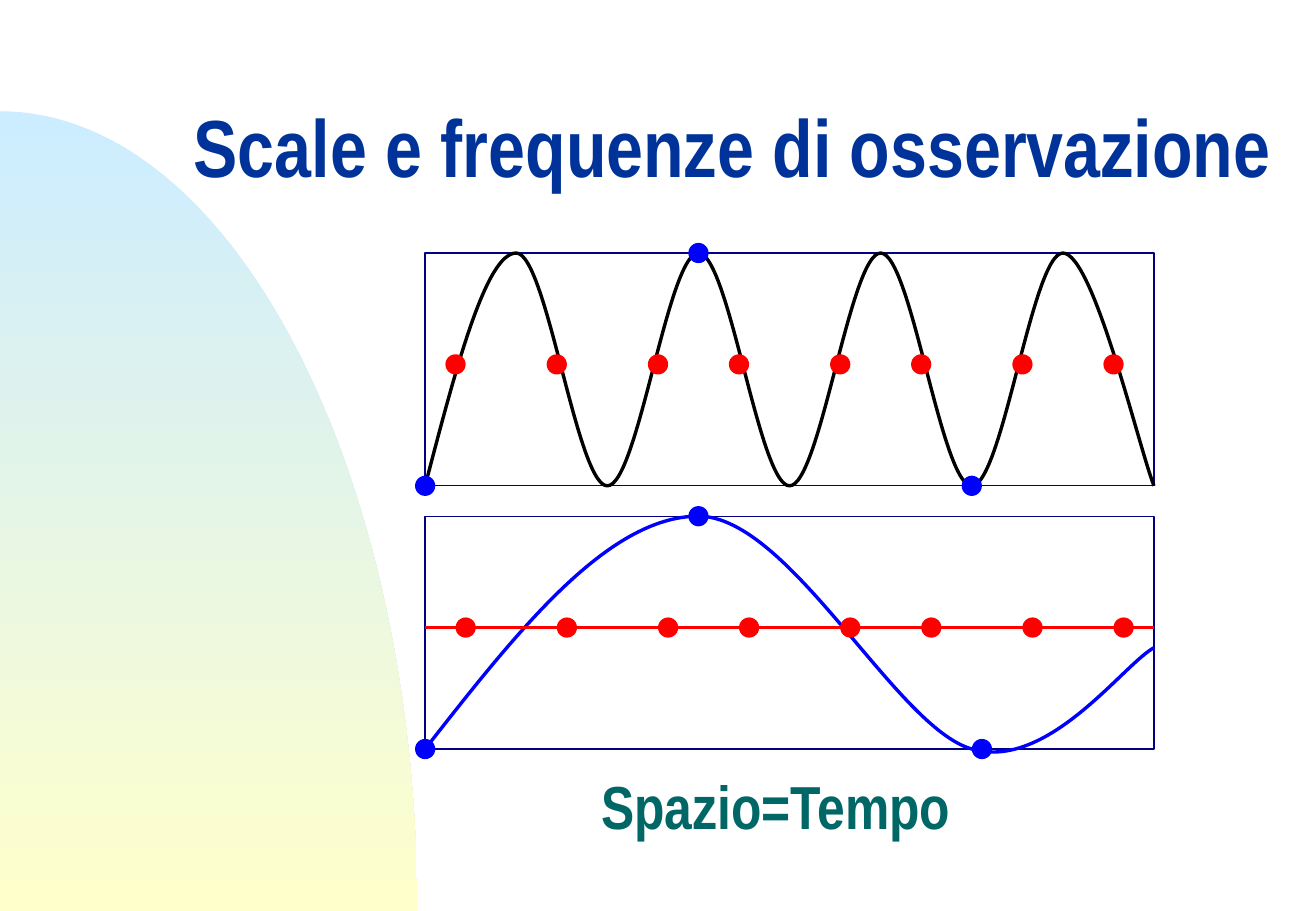
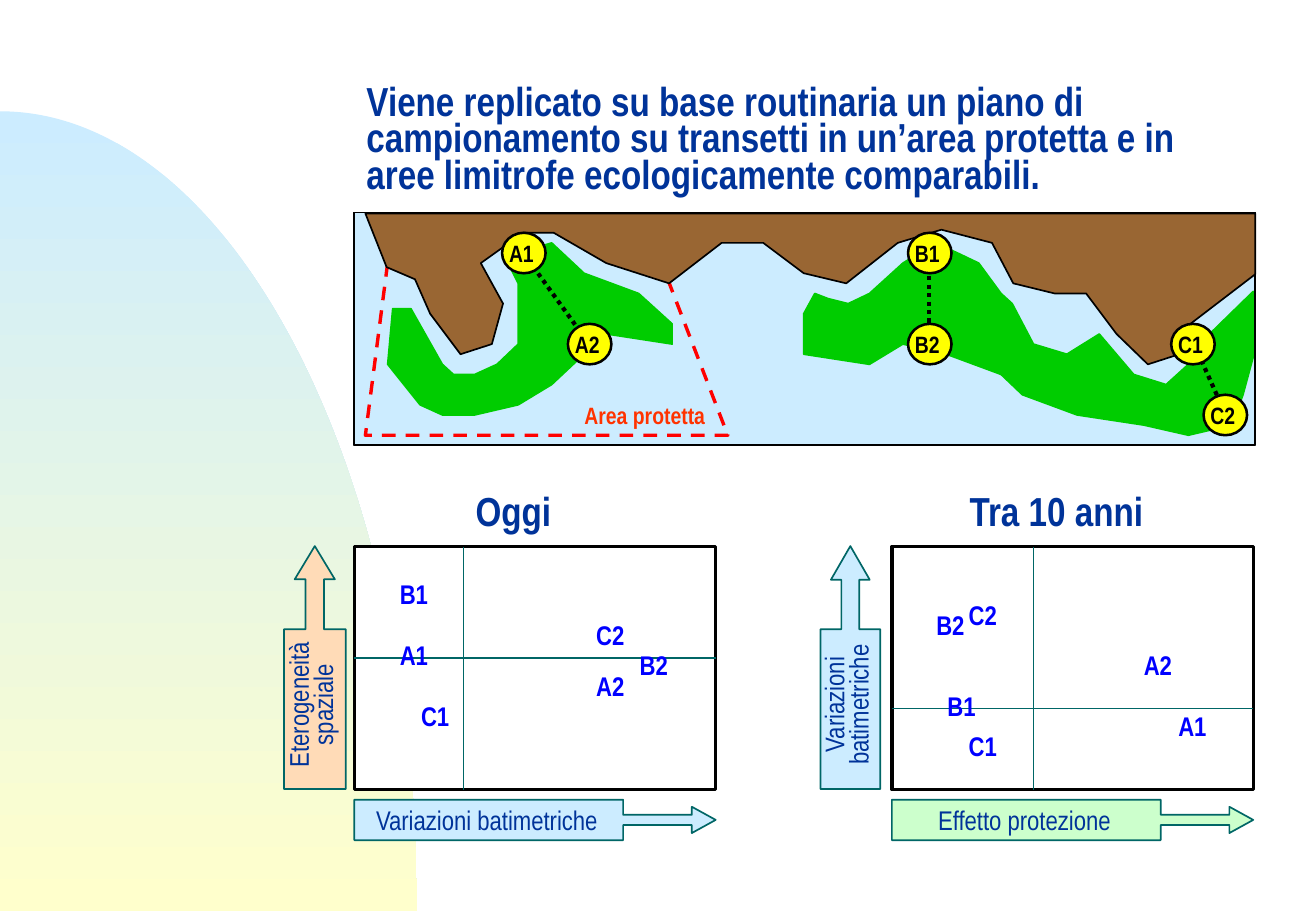
import dataclasses
import typing

import lxml.etree
import pptx
import pptx.dml.color
import pptx.enum.dml
import pptx.enum.shapes
import pptx.enum.text
import pptx.oxml.ns
import pptx.slide
import pptx.util

PX = 7620  # 120 px to the inch
FONT = "Arial Narrow"
HUES = {
    "navy": "003399", "frame": "000080", "teal": "006666", "black": "000000",
    "ink": "010000", "white": "FFFFFF", "red": "FF0000", "blue": "0000FF",
    "sky": "CCECFF", "cream": "FFFFCC", "green": "00CC00", "mint": "CCFFCC",
    "peach": "FFDBB7", "brown": "996633", "yellow": "FFFF00", "orange": "FF3300",
}
KIND = pptx.enum.shapes.MSO_SHAPE
DASH = pptx.enum.dml.MSO_LINE.DASH
DOTS = pptx.enum.dml.MSO_LINE.ROUND_DOT
ALIGN = pptx.enum.text.PP_ALIGN
ANCHOR = pptx.enum.text.MSO_ANCHOR

Point = tuple[int, int]
Slide = pptx.slide.Slide


class Box(typing.NamedTuple):
    left: int
    top: int
    width: int
    height: int


@dataclasses.dataclass
class Pen:
    hue: str
    width: float
    dash: typing.Any = None


@dataclasses.dataclass
class Type:
    size: int
    hue: str = "navy"
    bold: bool = True
    align: typing.Any = ALIGN.LEFT
    gap: float = 1.0
    inset: tuple[int, int] = (12, 6)
    anchor: typing.Any = ANCHOR.TOP
    turn: int = 0


@dataclasses.dataclass
class Arrow:
    box: Box
    fill: str
    adjust: tuple[float, ...]
    text: str
    label: Box
    type: Type
    turn: int = 0


@dataclasses.dataclass
class Plot:
    """A chart of sites: frame, cross lines, heading, site marks and axis arrows."""
    left: int
    cross: Point
    title: str
    head: Box
    sites: dict[str, Point]
    axes: tuple[Arrow, Arrow]


def emu(px: int) -> int:
    return px * PX


def color(hue: str) -> pptx.dml.color.RGBColor:
    return pptx.dml.color.RGBColor.from_string(HUES[hue])


def stroke(line: typing.Any, pen: Pen | None) -> None:
    if pen is None:
        line.fill.background()
        return
    line.color.rgb = color(pen.hue)
    line.width = pptx.util.Pt(pen.width)
    if pen.dash is not None:
        line.dash_style = pen.dash


def paint(shape: typing.Any, fill: str | None, pen: Pen | None) -> None:
    shape.shadow.inherit = False
    if fill is None:
        shape.fill.background()
    else:
        shape.fill.solid()
        shape.fill.fore_color.rgb = color(fill)
    stroke(shape.line, pen)


def add_form(slide: Slide, kind: typing.Any, box: Box, fill: str | None = None,
             pen: Pen | None = None) -> typing.Any:
    shape = slide.shapes.add_shape(kind, *map(emu, box))
    paint(shape, fill, pen)
    return shape


def add_path(slide: Slide, points: typing.Sequence[Point], fill: str | None = None,
             pen: Pen | None = None, close: bool = True) -> typing.Any:
    draft = slide.shapes.build_freeform(*points[0], scale=float(PX))
    draft.add_line_segments(points[1:], close=close)
    shape = draft.convert_to_shape()
    paint(shape, fill, pen)
    return shape


def bend(shape: typing.Any, arcs: int) -> None:
    """Turn each of the first triples of straight segments into one Bezier arc."""
    name = pptx.oxml.ns.qn
    lines = list(shape._element.spPr.iter(name("a:lnTo")))
    for i in range(0, 3 * arcs, 3):
        arc = lxml.etree.Element(name("a:cubicBezTo"))
        lines[i].addprevious(arc)
        for line in lines[i:i + 3]:
            arc.append(line[0])
            line.getparent().remove(line)


def add_curve(slide: Slide, points: typing.Sequence[Point], pen: Pen) -> None:
    bend(add_path(slide, points, pen=pen, close=False), len(points) // 3)


def add_line(slide: Slide, start: Point, end: Point, pen: Pen) -> None:
    line = slide.shapes.add_connector(
        pptx.enum.shapes.MSO_CONNECTOR.STRAIGHT, *map(emu, start + end))
    stroke(line.line, pen)
    lxml.etree.SubElement(line._element.spPr, pptx.oxml.ns.qn("a:effectLst"))


def write(shape: typing.Any, text: str, style: Type) -> None:
    frame = shape.text_frame
    frame.text = text
    frame.word_wrap = True
    frame.auto_size = pptx.enum.text.MSO_AUTO_SIZE.NONE
    frame.vertical_anchor = style.anchor
    frame.margin_left = frame.margin_right = emu(style.inset[0])
    frame.margin_top = frame.margin_bottom = emu(style.inset[1])
    shape.rotation = style.turn
    for line in frame.paragraphs:
        line.alignment = style.align
        line.line_spacing = style.gap
        for run in line.runs:
            run.font.name = FONT
            run.font.size = pptx.util.Pt(style.size)
            run.font.bold = style.bold
            run.font.color.rgb = color(style.hue)


def add_text(slide: Slide, box: Box, text: str, style: Type) -> None:
    write(slide.shapes.add_textbox(*map(emu, box)), text, style)


def set_title(slide: Slide, box: Box, text: str, style: Type) -> None:
    title = slide.shapes.title
    title.left, title.top, title.width, title.height = map(emu, box)
    write(title, text, style)


def add_band(slide: Slide) -> None:
    """Draw the shaded arch and move it to the layout that all slides share."""
    band = add_path(slide, [(0, 110), (227, 110), (412, 464), (412, 900), (0, 900)])
    bend(band, 1)
    band.fill.gradient()
    band.fill.gradient_angle = 270
    for stop, hue in zip(band.fill.gradient_stops, ("sky", "cream")):
        stop.color.rgb = color(hue)
    slide.slide_layout.shapes._spTree.insert(2, band._element)


def add_dots(slide: Slide, spots: typing.Iterable[Point], hue: str) -> None:
    for x, y in spots:
        add_form(slide, KIND.OVAL, Box(x, y, 20, 20), hue)


def draw_waves(slide: Slide) -> None:
    set_title(slide, Box(100, 80, 1168, 150), "Scale e frequenze di osservazione",
              Type(48, align=ALIGN.RIGHT, gap=0.7, anchor=ANCHOR.MIDDLE))
    for top in (510, 250):
        add_form(slide, KIND.RECTANGLE, Box(420, top, 720, 230), pen=Pen("frame", 0.75))

    fast = [(420, 480), (450, 365)]
    for k in range(1, 8):
        x, y = 420 + 90 * k, 250 if k % 2 else 480
        fast += [(x - 30, y), (x, y), (x + 30, y)]
    fast += [(1125, 442), (1140, 480)]
    slow = [(420, 740), (510, 625), (600, 510), (690, 510), (780, 510),
            (885, 719), (960, 740), (1035, 762), (1110, 656), (1140, 640)]
    reds = (440, 540, 640, 720, 820, 900, 1000, 1090)

    add_curve(slide, fast, Pen("black", 2))
    add_dots(slide, [(x, 350) for x in reds], "red")
    add_dots(slide, [(410, 470), (680, 240), (950, 470)], "blue")
    add_curve(slide, slow, Pen("blue", 2))
    add_dots(slide, [(410, 730), (680, 500), (960, 730)], "blue")
    add_dots(slide, [(x + 10, 610) for x in reds], "red")
    add_line(slide, (420, 620), (1140, 620), Pen("red", 2))
    add_text(slide, Box(341, 770, 851, 66), "Spazio=Tempo",
             Type(36, "teal", align=ALIGN.CENTER, gap=0.75))


EAST = [(805, 290), (794, 310), (794, 350), (859, 360), (892, 340), (935, 350), (989, 370),
        (1010, 390), (1064, 410), (1130, 420), (1174, 430), (1217, 420), (1228, 390),
        (1238, 353), (1238, 288), (1195, 330), (1174, 360), (1152, 380), (1120, 370),
        (1086, 330), (1054, 350), (1021, 340), (1000, 300), (989, 290), (967, 260),
        (946, 250), (924, 240), (892, 260), (859, 290), (838, 300), (818, 295), (805, 290)]
WEST = [(406, 305), (437, 360), (448, 370), (469, 370), (491, 360), (512, 340), (512, 300),
        (512, 280), (502, 260), (512, 250), (545, 240), (577, 270), (631, 290), (664, 320),
        (664, 340), (599, 330), (577, 350), (545, 380), (512, 400), (469, 410), (437, 410),
        (415, 400), (383, 360), (388, 305), (406, 305)]
GUARD = [(383, 260), (361, 430), (719, 430), (642, 230), (534, 220), (426, 240), (383, 260)]
COAST = [(361, 211), (382, 264), (410, 276), (425, 310), (455, 350), (486, 340), (497, 300),
         (475, 260), (517, 230), (547, 230), (599, 260), (661, 280), (713, 240), (754, 240),
         (794, 270), (836, 280), (887, 240), (930, 227), (980, 240), (1001, 280),
         (1042, 290), (1073, 290), (1103, 330), (1134, 360), (1165, 350), (1176, 320),
         (1240, 271), (1240, 211), (361, 211)]
ROUTES = [((517, 250), (582, 340), {"A1": (496, 230), "A2": (561, 320)}),
          ((918, 248), (918, 341), {"B2": (897, 320), "B1": (897, 230)}),
          ((1180, 341), (1211, 410), {"C1": (1157, 320), "C2": (1189, 390)})]


def draw_map(slide: Slide) -> None:
    sea = Box(350, 210, 890, 230)
    thin = Pen("black", 1)
    add_form(slide, KIND.RECTANGLE, sea, "sky", thin)
    for field in (EAST, WEST):
        add_path(slide, field, "green", Pen("green", 1))
    add_form(slide, KIND.RECTANGLE, sea, pen=thin)
    add_text(slide, Box(556, 390, 162, 40), "Area protetta",
             Type(14, "orange", align=ALIGN.CENTER))
    add_path(slide, GUARD, pen=Pen("red", 2, DASH))
    add_path(slide, COAST, "brown", thin)
    for start, end, sites in ROUTES:
        add_line(slide, start, end, Pen("black", 2.5, DOTS))
        for name, (x, y) in sites.items():
            add_form(slide, KIND.OVAL, Box(x, y, 43, 40), "yellow", Pen("black", 1.5))
            add_text(slide, Box(x - 5, y, 54, 40), name, Type(14, "ink"))


def flat(left: int, fill: str, text: str) -> Arrow:
    return Arrow(Box(left, 790, 357, 40), fill, (0.25, 0.325, 0.589, 0.744), text,
                 Box(left - 10, 788, 282, 44), Type(16, bold=False, align=ALIGN.CENTER))


def tall(left: int, depth: int, fill: str, head: float, text: str) -> Arrow:
    return Arrow(Box(left, 659 - depth // 2, 240, depth), fill, (0.299, 0.325, head, 0.658),
                 text, Box(left + 43, 666, 152, 60),
                 Type(16, bold=False, align=ALIGN.CENTER, gap=0.75, turn=270), 270)


PLOTS = [
    Plot(350, (458, 650), "Oggi", Box(458, 480, 119, 60),
         {"A1": (394, 630), "A2": (588, 660), "B2": (631, 640),
          "B1": (394, 570), "C1": (415, 690), "C2": (588, 610)},
         (flat(350, "sky", "Variazioni batimetriche"),
          tall(191, 61, "peach", 0.538, "Eterogeneità\vspaziale"))),
    Plot(881, (1021, 700), "Tra 10 anni", Box(946, 480, 228, 60),
         {"A1": (1163, 700), "A2": (1129, 640), "B2": (924, 600),
          "B1": (935, 680), "C1": (956, 720), "C2": (956, 590)},
         (flat(881, "mint", "Effetto protezione"),
          tall(720, 59, "sky", 0.563, "Variazioni\vbatimetriche"))),
]


def draw_plot(slide: Slide, plot: Plot) -> None:
    pen = Pen("teal", 1)
    x, y = plot.cross
    add_form(slide, KIND.RECTANGLE, Box(plot.left, 540, 357, 240), "white", Pen("black", 2))
    add_line(slide, (x, 540), (x, 780), pen)
    add_line(slide, (plot.left, y), (plot.left + 357, y), pen)
    for name, spot in plot.sites.items():
        add_text(slide, Box(*spot, 43, 35), name, Type(16, "blue", inset=(1, 1)))
    for axis in plot.axes:
        arrow = add_form(slide, KIND.RIGHT_ARROW_CALLOUT, axis.box, axis.fill, pen)
        arrow.rotation = axis.turn
        for i, value in enumerate(axis.adjust):
            arrow.adjustments[i] = value
        add_text(slide, axis.label, axis.text, axis.type)
    add_text(slide, plot.head, plot.title, Type(24, gap=0.7, anchor=ANCHOR.MIDDLE))


def draw_plan(slide: Slide) -> None:
    set_title(slide, Box(350, 80, 888, 120),
              "Viene replicato su base routinaria un piano di campionamento su transetti "
              "in un’area protetta e in aree limitrofe ecologicamente comparabili.",
              Type(24, gap=0.75, anchor=ANCHOR.MIDDLE))
    draw_map(slide)
    for plot in PLOTS:
        draw_plot(slide, plot)


def main() -> None:
    deck = pptx.Presentation()
    deck.slide_width, deck.slide_height = emu(1300), emu(900)
    layout = deck.slide_layouts[5]
    waves, plan = (deck.slides.add_slide(layout) for _ in range(2))
    add_band(waves)
    draw_waves(waves)
    draw_plan(plan)
    deck.save("out.pptx")


if __name__ == "__main__":
    main()
